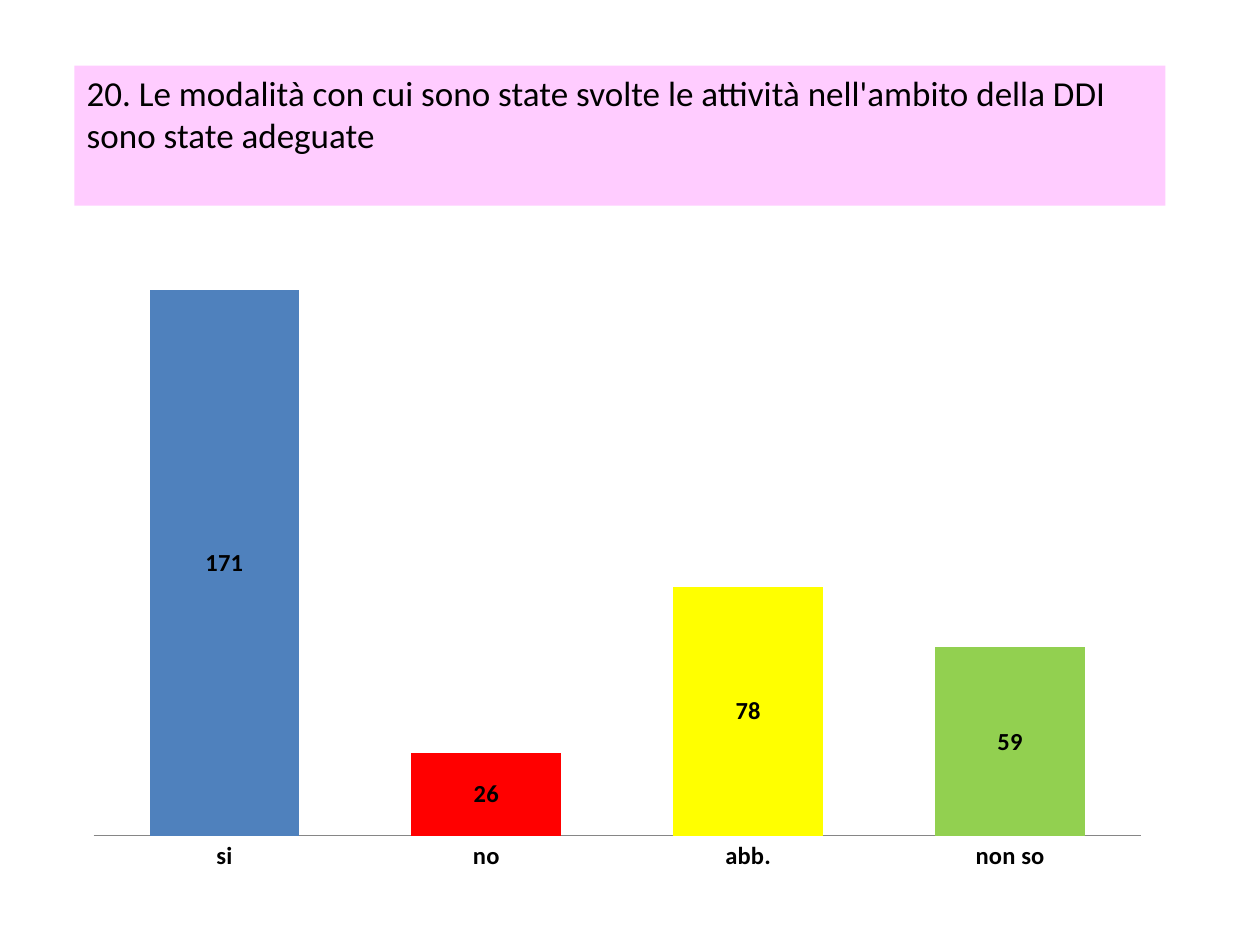
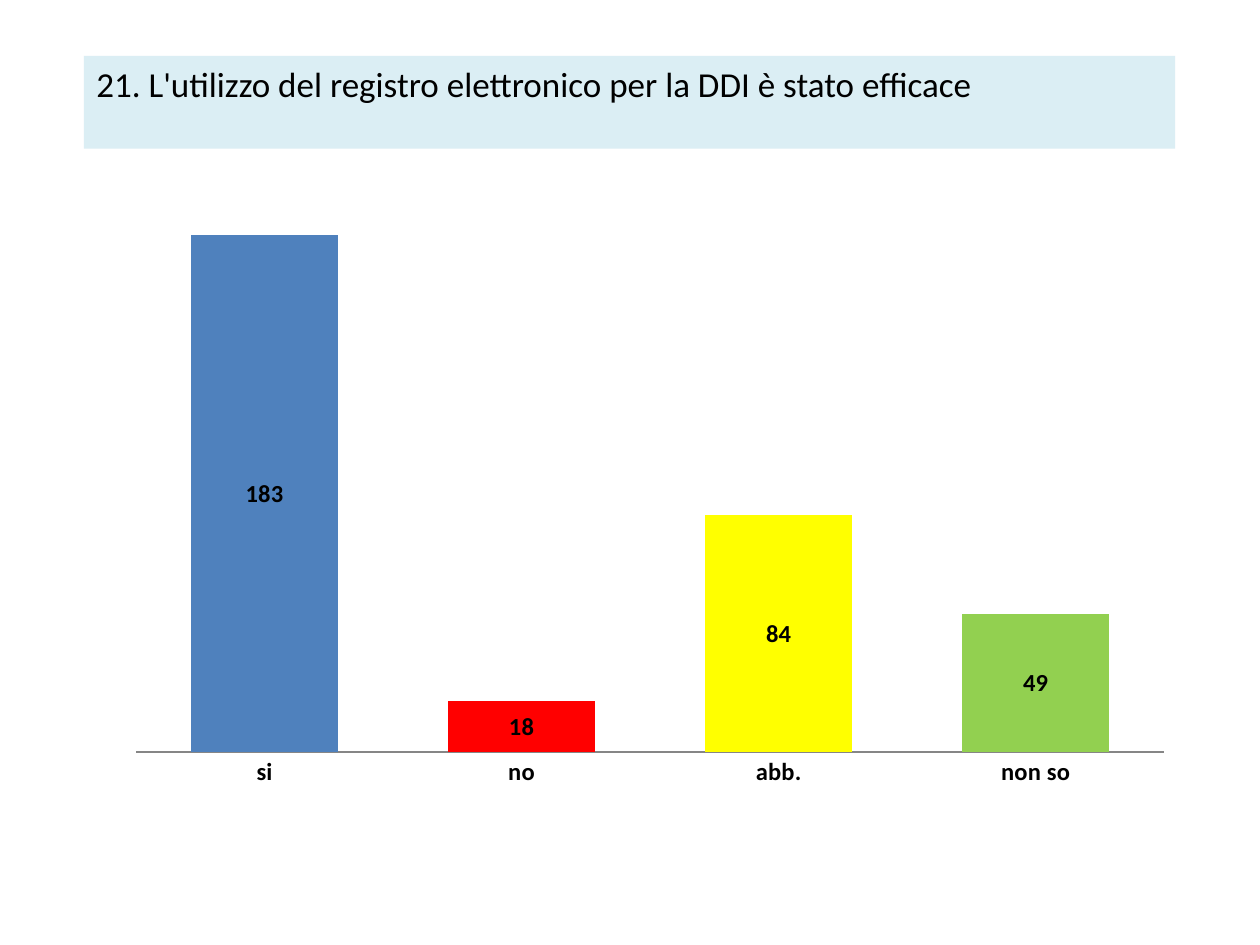
from dataclasses import dataclass

import pptx
import pptx.chart.data
import pptx.dml.color
import pptx.enum.chart
import pptx.enum.shapes
import pptx.enum.text
import pptx.util

Pt = pptx.util.Pt


@dataclass(frozen=True)
class Theme:
    font: str = "Calibri"
    text: str = "000000"
    axis: str = "868686"
    pink: str = "FFCCFF"
    pale_blue: str = "DBEEF4"
    bars: tuple = ("4F81BD", "FF0000", "FFFF00", "92D050")
    question_size: int = 20
    chart_size: int = 10
    label_size: int = 14


THEME = Theme()
ANSWERS = ("si", "no", "abb.", "non so")


def rgb(value):
    return pptx.dml.color.RGBColor.from_string(value)


def style_font(font, size, bold=False):
    font.name = THEME.font
    font.size = Pt(size)
    font.bold = bold
    font.color.rgb = rgb(THEME.text)


def add_question(page, text, frame, fill):
    """Add the coloured band that carries the survey question."""
    band = page.shapes.add_shape(
        pptx.enum.shapes.MSO_SHAPE.RECTANGLE, *map(Pt, frame))
    band.shadow.inherit = False
    band.fill.solid()
    band.fill.fore_color.rgb = rgb(fill)
    band.line.fill.background()
    text_frame = band.text_frame
    text_frame.word_wrap = True
    text_frame.vertical_anchor = pptx.enum.text.MSO_ANCHOR.TOP
    text_frame.text = text
    para = text_frame.paragraphs[0]
    para.alignment = pptx.enum.text.PP_ALIGN.LEFT
    style_font(para.runs[0].font, THEME.question_size)


def add_answer_chart(page, counts, frame, axis_top):
    """Add one column per answer, each in its own colour."""
    data = pptx.chart.data.CategoryChartData()
    data.categories = ANSWERS
    data.add_series("Series 1", counts)
    chart = page.shapes.add_chart(
        pptx.enum.chart.XL_CHART_TYPE.COLUMN_STACKED,
        *map(Pt, frame), data).chart
    chart.has_legend = False
    chart.has_title = False
    style_font(chart.font, THEME.chart_size)

    category_axis = chart.category_axis
    category_axis.major_tick_mark = pptx.enum.chart.XL_TICK_MARK.NONE
    category_axis.format.line.color.rgb = rgb(THEME.axis)
    category_axis.format.line.width = Pt(0.75)
    style_font(category_axis.tick_labels.font, THEME.label_size, bold=True)

    value_axis = chart.value_axis
    value_axis.visible = False
    value_axis.has_major_gridlines = False
    value_axis.minimum_scale = 0
    value_axis.maximum_scale = axis_top

    plot = chart.plots[0]
    plot.gap_width = 75
    plot.overlap = 100
    plot.vary_by_categories = False
    plot.has_data_labels = True
    labels = plot.data_labels
    labels.show_value = True
    labels.position = pptx.enum.chart.XL_LABEL_POSITION.CENTER
    style_font(labels.font, THEME.label_size, bold=True)

    series = plot.series[0]
    for index, color in enumerate(THEME.bars):
        fill = series.points[index].format.fill
        fill.solid()
        fill.fore_color.rgb = rgb(color)


def add_survey_page(deck, question, band_frame, band_fill,
                    counts, chart_frame, axis_top):
    page = deck.slides.add_slide(deck.slide_layouts[6])
    add_question(page, question, band_frame, band_fill)
    add_answer_chart(page, counts, chart_frame, axis_top)


def main():
    deck = pptx.Presentation()
    deck.slide_width, deck.slide_height = Pt(720), Pt(540)
    add_survey_page(
        deck,
        "20. Le modalità con cui sono state svolte le attività "
        "nell'ambito della DDI sono state adeguate",
        (42.5, 37.5, 623.5, 80), THEME.pink,
        (171, 26, 78, 59), (41, 142, 623.5, 363), axis_top=180)
    add_survey_page(
        deck,
        "21. L'utilizzo del registro elettronico per la DDI è stato efficace",
        (48, 32, 623.5, 53), THEME.pale_blue,
        (183, 18, 84, 49), (65.5, 100, 612, 357), axis_top=200)
    deck.save("out.pptx")


if __name__ == "__main__":
    main()
